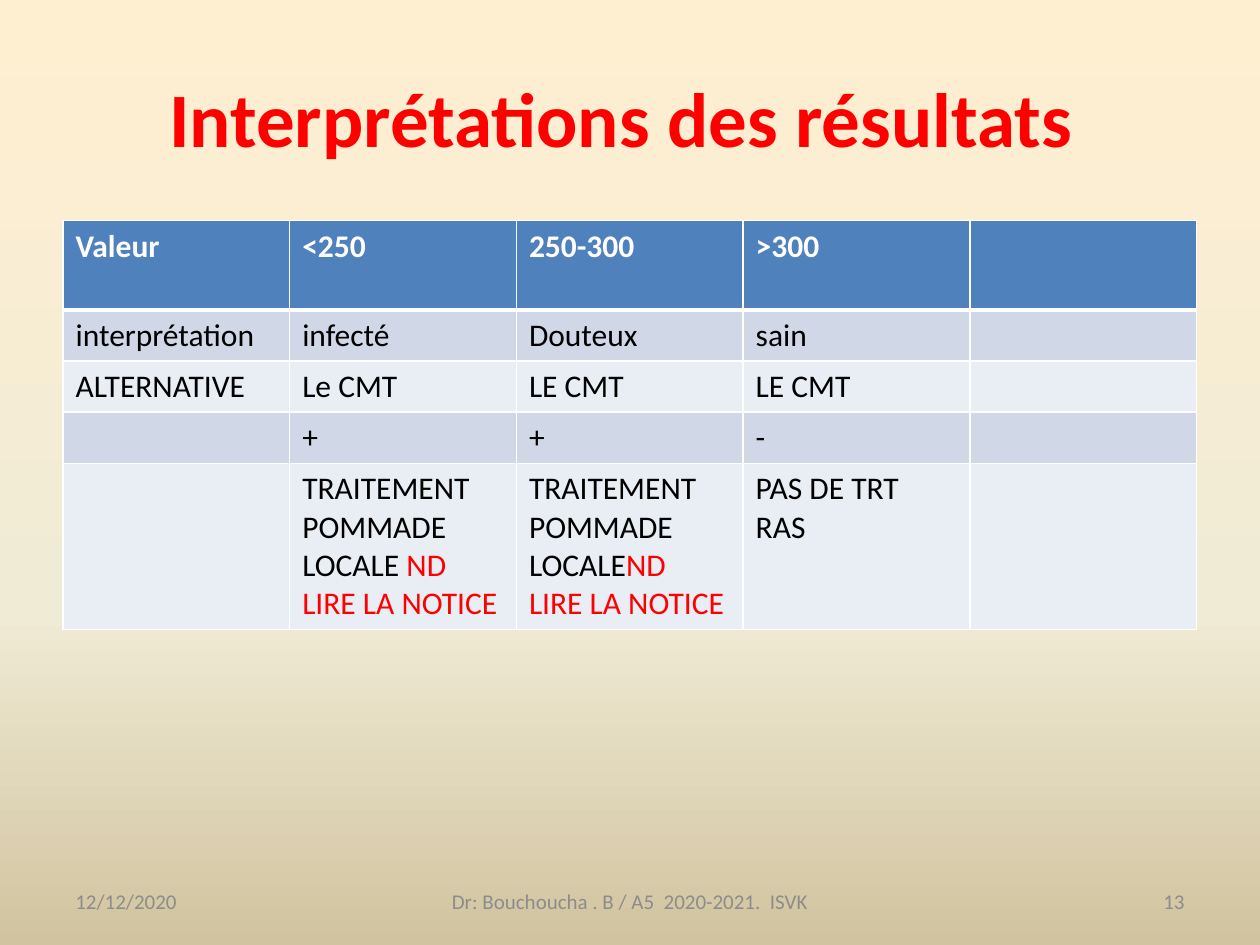
from lxml.etree import SubElement
from pptx import Presentation
from pptx.dml.color import RGBColor
from pptx.enum.text import MSO_ANCHOR as Anchor, PP_ALIGN as Align
from pptx.oxml import parse_xml
from pptx.oxml.ns import nsdecls, qn
from pptx.util import Cm, Pt

FONT = "Calibri"
RED = RGBColor(0xFF, 0x00, 0x00)
BLACK = RGBColor(0x00, 0x00, 0x00)
WHITE = RGBColor(0xFF, 0xFF, 0xFF)
GREY = RGBColor(0x8C, 0x8C, 0x8C)
BLUE = RGBColor(0x4F, 0x81, 0xBD)
BANDS = [RGBColor(0xD0, 0xD8, 0xE8), RGBColor(0xE9, 0xED, 0xF4)]
BACKDROP = [
    (0, RGBColor(0xFF, 0xEF, 0xD1)),
    (65, RGBColor(0xF0, 0xEB, 0xD5)),
    (100, RGBColor(0xD1, 0xC3, 0x9F)),
]

COL_WIDTH = Cm(4.57)
ROW_HEIGHTS = [Cm(1.8), Cm(1.03), Cm(1.03), Cm(1.03), Cm(3.35)]


def treatment(product):
    return [
        [("TRAITEMENT", BLACK)],
        [(product, BLACK), ("ND", RED)],
        [("LIRE LA NOTICE", RED)],
    ]


ROWS = [
    ["Valeur", "<250", "250-300", ">300", ""],
    ["interprétation", "infecté", "Douteux", "sain", ""],
    ["ALTERNATIVE", "Le CMT", "LE CMT", "LE CMT", ""],
    ["", "+", "+", "-", ""],
    ["", treatment("POMMADE LOCALE "), treatment("POMMADE LOCALE"),
     [[("PAS DE TRT", BLACK)], [("RAS", BLACK)]], ""],
]


def set_background(s):
    fill = s.background.fill
    fill.gradient()
    fill.gradient_angle = 270
    stops = s.element.find(".//" + qn("a:gsLst"))
    for stop in list(stops):
        stops.remove(stop)
    for percent, color in BACKDROP:
        stop = SubElement(stops, qn("a:gs"), pos=str(percent * 1000))
        SubElement(stop, qn("a:srgbClr"), val=str(color))


def add_run(p, text, size, color, bold=False):
    r = p.add_run()
    r.text = text
    r.font.name = FONT
    r.font.size = Pt(size)
    r.font.bold = bold
    r.font.color.rgb = color


def format_title(s, text):
    sp = s.shapes.title
    sp.left, sp.top, sp.width, sp.height = Cm(1.27), Cm(0.76), Cm(22.86), Cm(3.18)
    tf = sp.text_frame
    tf.vertical_anchor = Anchor.MIDDLE
    p = tf.paragraphs[0]
    p.alignment = Align.CENTER
    add_run(p, text, 44, RED, True)


def set_borders(cell, bottom):
    props = cell._tc.get_or_add_tcPr()
    widths = {"lnL": 1, "lnR": 1, "lnT": 1, "lnB": bottom}
    for i, (tag, width) in enumerate(widths.items()):
        props.insert(i, parse_xml(
            f'<a:{tag} {nsdecls("a")} w="{Pt(width)}"><a:solidFill>'
            f'<a:srgbClr val="{WHITE}"/></a:solidFill></a:{tag}>'))


def fill_cell(cell, content, header, band):
    cell.fill.solid()
    cell.fill.fore_color.rgb = BLUE if header else band
    set_borders(cell, 3 if header else 1)
    if not content:
        return
    if isinstance(content, str):
        content = [[(content, WHITE if header else BLACK)]]
    tf = cell.text_frame
    for i, runs in enumerate(content):
        p = tf.add_paragraph() if i else tf.paragraphs[0]
        for text, color in runs:
            add_run(p, text, 18, color, header)


def add_results_table(s):
    frame = s.shapes.add_table(len(ROWS), len(ROWS[0]), Cm(1.27), Cm(4.45),
                               COL_WIDTH * len(ROWS[0]), sum(ROW_HEIGHTS))
    table = frame.table
    for column in table.columns:
        column.width = COL_WIDTH
    for i, (row, height) in enumerate(zip(ROWS, ROW_HEIGHTS)):
        table.rows[i].height = height
        for j, content in enumerate(row):
            fill_cell(table.cell(i, j), content, i == 0, BANDS[(i - 1) % 2])


def add_footer(s, text, left, width, align):
    tf = s.shapes.add_textbox(left, Cm(17.65), width, Cm(1.02)).text_frame
    tf.word_wrap = True
    tf.vertical_anchor = Anchor.MIDDLE
    p = tf.paragraphs[0]
    p.alignment = align
    add_run(p, text, 12, GREY)


def main():
    prs = Presentation()
    prs.slide_width, prs.slide_height = Cm(25.4), Cm(19.05)
    s = prs.slides.add_slide(prs.slide_layouts[5])
    set_background(s)
    format_title(s, "Interprétations des résultats ")
    add_results_table(s)
    add_footer(s, "12/12/2020", Cm(1.27), Cm(5.93), Align.LEFT)
    add_footer(s, "Dr: Bouchoucha . B / A5  2020-2021.  ISVK", Cm(8.68), Cm(8.04), Align.CENTER)
    add_footer(s, "13", Cm(18.2), Cm(5.93), Align.RIGHT)
    prs.save("out.pptx")


if __name__ == "__main__":
    main()
